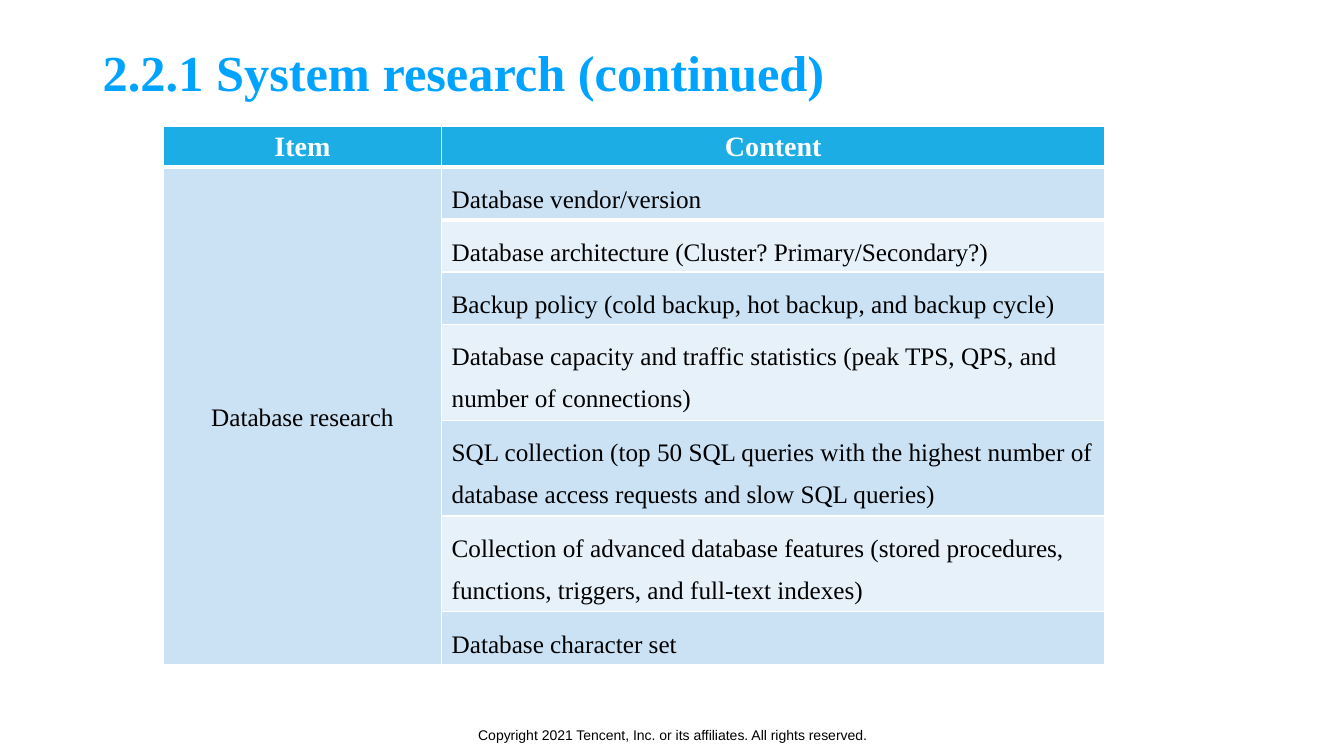
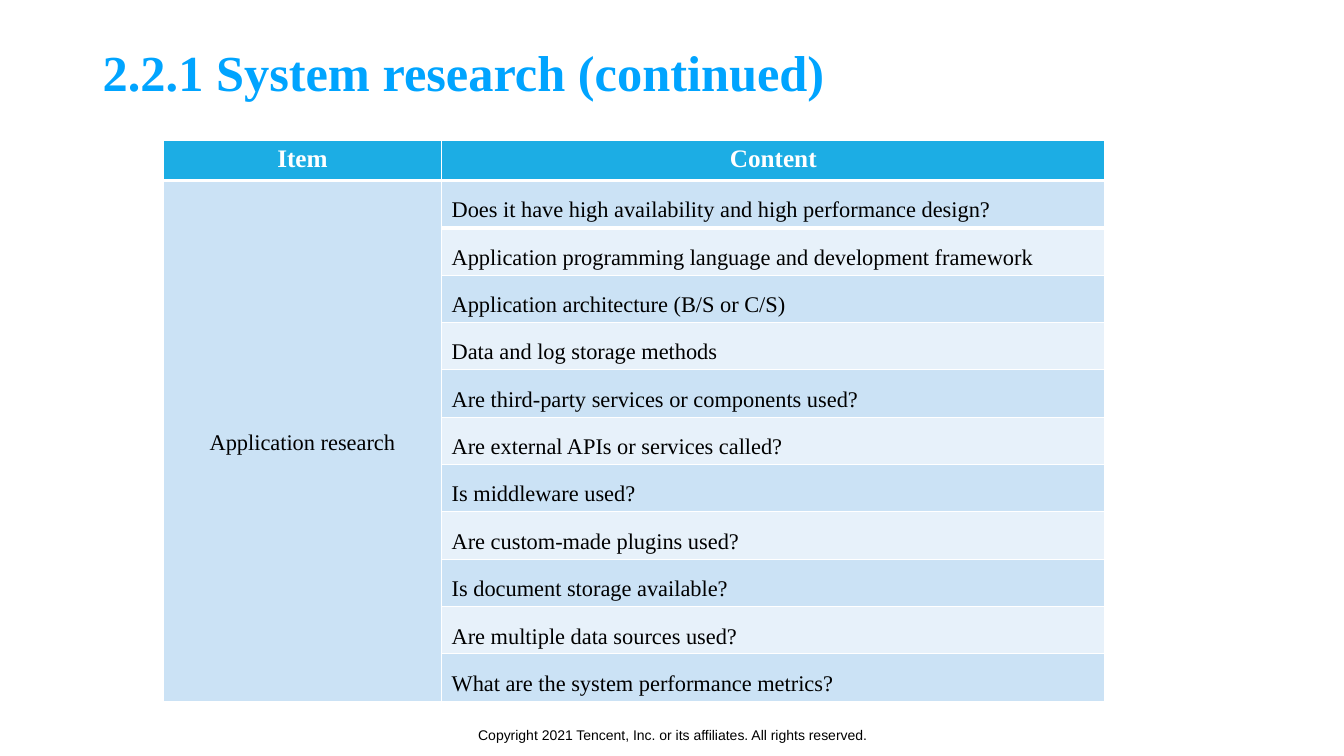
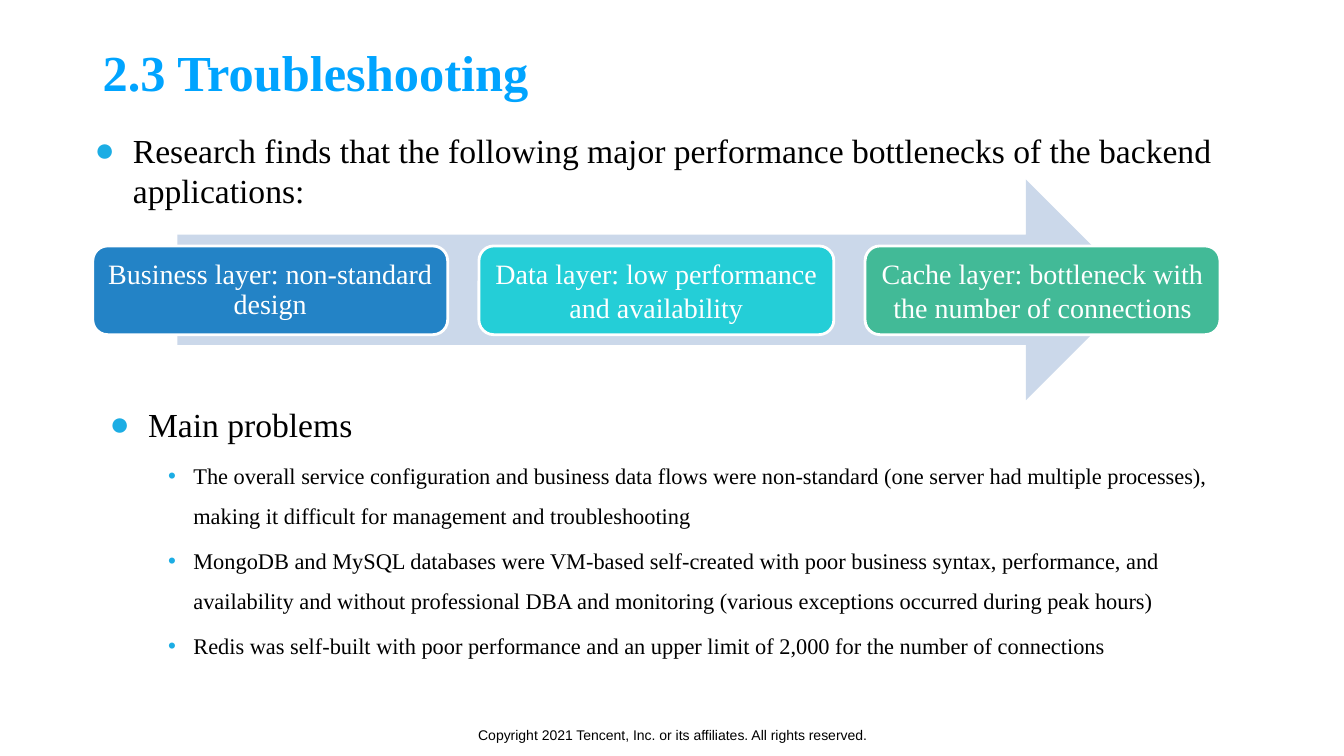
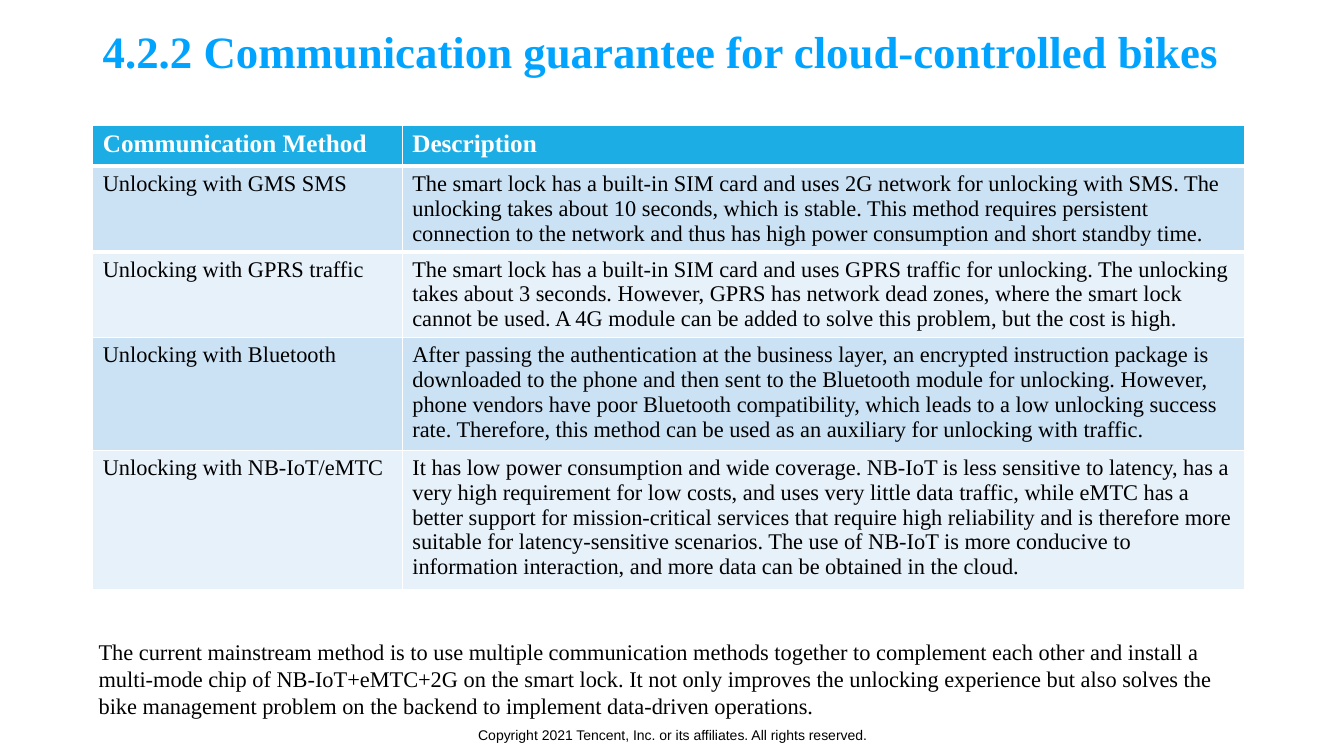
from pptx import Presentation
from pptx.dml.color import RGBColor
from pptx.enum import shapes, text
from pptx.oxml import parse_xml
from pptx.oxml.ns import nsdecls
from pptx.util import Inches, Pt

TITLE_BLUE = RGBColor(0x00, 0xA4, 0xFF)
ACCENT = RGBColor(0x1C, 0xAD, 0xE4)
ROW_DARK = RGBColor(0xCB, 0xE2, 0xF5)
ROW_LIGHT = RGBColor(0xE7, 0xF1, 0xFA)
ARROW = RGBColor(0xCB, 0xD8, 0xEA)
BLUE = RGBColor(0x23, 0x83, 0xC6)
CYAN = RGBColor(0x24, 0xCE, 0xD7)
GREEN = RGBColor(0x42, 0xBA, 0x97)
WHITE = RGBColor(0xFF, 0xFF, 0xFF)
BLACK = RGBColor(0x00, 0x00, 0x00)
SERIF = "Times New Roman"
CENTER = text.PP_ALIGN.CENTER
MIDDLE = text.MSO_ANCHOR.MIDDLE
FOOTER = "Copyright 2021 Tencent, Inc. or its affiliates. All rights reserved."

PAGES = [
    {
        "title": "2.2.1 System research (continued)",
        "table": {
            "at": (1.62, 1.25), "widths": (2.76, 6.58), "sizes": (20, 18), "merged": True,
            "heights": [0.41] + [0.52] * 3 + [0.93] * 3 + [0.52],
            "rows": [
                ("Item", "Content"),
                ("Database research", "Database vendor/version"),
                ("", "Database architecture (Cluster? Primary/Secondary?)"),
                ("", "Backup policy (cold backup, hot backup, and backup cycle)"),
                ("", "Database capacity and traffic statistics (peak TPS, QPS, and number of connections)"),
                ("", "SQL collection (top 50 SQL queries with the highest number of database access "
                     "requests and slow SQL queries)"),
                ("", "Collection of advanced database features (stored procedures, functions, "
                     "triggers, and full-text indexes)"),
                ("", "Database character set"),
            ],
        },
    },
    {
        "title": "2.2.1 System research (continued)",
        "table": {
            "at": (1.62, 1.39), "widths": (2.76, 6.58), "sizes": (18, 16), "merged": True,
            "heights": [0.4] + [0.47] * 11,
            "rows": [
                ("Item", "Content"),
                ("Application research", "Does it have high availability and high performance design?"),
                ("", "Application programming language and development framework"),
                ("", "Application architecture (B/S or C/S)"),
                ("", "Data and log storage methods"),
                ("", "Are third-party services or components used?"),
                ("", "Are external APIs or services called?"),
                ("", "Is middleware used?"),
                ("", "Are custom-made plugins used?"),
                ("", "Is document storage available?"),
                ("", "Are multiple data sources used?"),
                ("", "What are the system performance metrics?"),
            ],
        },
    },
    {
        "title": "2.3 Troubleshooting",
        "problems": [
            "The overall service configuration and business data flows were non-standard (one server "
            "had multiple processes), making it difficult for management and troubleshooting",
            "MongoDB and MySQL databases were VM-based self-created with poor business syntax, "
            "performance, and availability and without professional DBA and monitoring (various "
            "exceptions occurred during peak hours)",
            "Redis was self-built with poor performance and an upper limit of 2,000 for the number "
            "of connections",
        ],
        "finding": "Research finds that the following major performance bottlenecks of the backend "
                   "applications:",
        "layers": [
            ("Business layer: non-standard design", BLUE, 0.9),
            ("Data layer: low performance and availability", CYAN, 1.0),
            ("Cache layer: bottleneck with the number of connections", GREEN, 1.0),
        ],
    },
    {
        "title": "4.2.2 Communication guarantee for cloud-controlled bikes",
        "title_top": 0.04, "title_width": 11.89, "title_size": 32,
        "table": {
            "at": (0.92, 1.24), "widths": (3.07, 8.35), "sizes": (18, 16), "merged": False,
            "heights": [0.41, 0.84, 0.84, 1.09, 1.33],
            "rows": [
                ("Communication Method", "Description"),
                ("Unlocking with GMS SMS",
                 "The smart lock has a built-in SIM card and uses 2G network for unlocking with SMS. "
                 "The unlocking takes about 10 seconds, which is stable. This method requires "
                 "persistent connection to the network and thus has high power consumption and "
                 "short standby time."),
                ("Unlocking with GPRS traffic",
                 "The smart lock has a built-in SIM card and uses GPRS traffic for unlocking. The "
                 "unlocking takes about 3 seconds. However, GPRS has network dead zones, where the "
                 "smart lock cannot be used. A 4G module can be added to solve this problem, but "
                 "the cost is high."),
                ("Unlocking with Bluetooth",
                 "After passing the authentication at the business layer, an encrypted instruction "
                 "package is downloaded to the phone and then sent to the Bluetooth module for "
                 "unlocking. However, phone vendors have poor Bluetooth compatibility, which leads "
                 "to a low unlocking success rate. Therefore, this method can be used as an "
                 "auxiliary for unlocking with traffic."),
                ("Unlocking with NB-IoT/eMTC",
                 "It has low power consumption and wide coverage. NB-IoT is less sensitive to "
                 "latency, has a very high requirement for low costs, and uses very little data "
                 "traffic, while eMTC has a better support for mission-critical services that "
                 "require high reliability and is therefore more suitable for latency-sensitive "
                 "scenarios. The use of NB-IoT is more conducive to information interaction, and "
                 "more data can be obtained in the cloud."),
            ],
        },
        "summary": "The current mainstream method is to use multiple communication methods together to "
                   "complement each other and install a multi-mode chip of NB-IoT+eMTC+2G on the smart "
                   "lock. It not only improves the unlocking experience but also solves the bike "
                   "management problem on the backend to implement data-driven operations.",
    },
]


def style(para, size, color=BLACK, bold=False, font=SERIF, align=None, spacing=None):
    para.alignment = align
    para.line_spacing = spacing
    for span in para.runs:
        span.font.size = Pt(size)
        span.font.name = font
        span.font.bold = bold
        span.font.color.rgb = color


def add_text(page, at, lines, bullets=None):
    """Add a wrapping text box; bullets holds (mark, left margin, hanging indent) per line."""
    box = page.shapes.add_textbox(*[Inches(length) for length in at])
    box.text_frame.word_wrap = True
    box.text_frame.text = "\n".join(lines)
    for para, (mark, margin, hang) in zip(box.text_frame.paragraphs, bullets or []):
        props = para._p.get_or_add_pPr()
        props.set("marL", str(Inches(margin)))
        props.set("indent", str(-Inches(hang)))
        for xml in (f'<a:buClr {nsdecls("a")}><a:srgbClr val="{ACCENT}"/></a:buClr>',
                    f'<a:buFont {nsdecls("a")} typeface="Arial"/>',
                    f'<a:buChar {nsdecls("a")} char="{mark}"/>'):
            props.append(parse_xml(xml))
    return box.text_frame


deck = Presentation()
deck.slide_width, deck.slide_height = Inches(13.33), Inches(7.5)

for content in PAGES:
    page = deck.slides.add_slide(deck.slide_layouts[6])

    footer = add_text(page, (4.07, 7.09, 5.2, 0.4), [FOOTER])
    footer.vertical_anchor = MIDDLE
    style(footer.paragraphs[0], 10, font="Arial", align=CENTER)

    title_at = (0.92, content.get("title_top", 0.25), content.get("title_width", 10.74), 0.99)
    title = add_text(page, title_at, [content["title"]])
    title.vertical_anchor = MIDDLE
    style(title.paragraphs[0], content.get("title_size", 36), TITLE_BLUE, bold=True, spacing=0.9)

    if "table" in content:
        grid = content["table"]
        rows, merged = grid["rows"], grid["merged"]
        left, top = grid["at"]
        table = page.shapes.add_table(len(rows), 2, Inches(left), Inches(top),
                                      Inches(sum(grid["widths"])), Inches(sum(grid["heights"]))).table
        for column, width in zip(table.columns, grid["widths"]):
            column.width = Inches(width)
        for line, height in zip(table.rows, grid["heights"]):
            line.height = Inches(height)
        header_size, body_size = grid["sizes"]
        for r, row in enumerate(rows):
            for c, words in enumerate(row):
                cell = table.cell(r, c)
                cell.text = words
                cell.margin_bottom = 0  # row heights already hold the lower gap
                cell.fill.solid()
                para = cell.text_frame.paragraphs[0]
                if r == 0:
                    cell.fill.fore_color.rgb = ACCENT
                    style(para, header_size, WHITE, bold=True, align=CENTER if merged else None)
                else:
                    cell.fill.fore_color.rgb = ROW_DARK if r % 2 else ROW_LIGHT
                    style(para, body_size, align=CENTER if merged and c == 0 else None,
                          spacing=1.5 if merged and c == 1 else None)
                if r < 2:
                    edge = "lnT" if r else "lnB"
                    cell._tc.get_or_add_tcPr().insert(0, parse_xml(
                        f'<a:{edge} {nsdecls("a")} w="{Pt(3)}"><a:solidFill>'
                        f'<a:srgbClr val="{WHITE}"/></a:solidFill></a:{edge}>'))
        if merged:
            table.cell(1, 0).merge(table.cell(len(rows) - 1, 0))
            table.cell(1, 0).vertical_anchor = MIDDLE

    if "problems" in content:
        problems = content["problems"]
        frame = add_text(page, (0.99, 3.76, 11.5, 3.07), ["Main problems"] + problems,
                         [("●", 0.38, 0.38)] + [("•", 0.83, 0.25)] * len(problems))
        style(frame.paragraphs[0], 24, spacing=1.5)
        for para in frame.paragraphs[1:]:
            style(para, 16, spacing=1.5)
            para.space_before = Pt(3.2)

        finding = add_text(page, (0.84, 1.24, 11.66, 1.87), [content["finding"]], [("●", 0.38, 0.38)])
        style(finding.paragraphs[0], 24)

        arrow = page.shapes.add_shape(shapes.MSO_SHAPE.RIGHT_ARROW, Inches(1.76), Inches(1.78),
                                      Inches(9.51), Inches(2.19))
        arrow.shadow.inherit = False
        arrow.fill.solid()
        arrow.fill.fore_color.rgb = ARROW
        arrow.line.fill.background()

        for i, (words, color, spacing) in enumerate(content["layers"]):
            card = page.shapes.add_shape(shapes.MSO_SHAPE.ROUNDED_RECTANGLE, Inches(0.92 + 3.83 * i),
                                         Inches(2.44), Inches(3.52), Inches(0.88))
            card.shadow.inherit = False
            card.fill.solid()
            card.fill.fore_color.rgb = color
            card.line.color.rgb = WHITE
            card.line.width = Pt(2)
            frame = card.text_frame
            frame.margin_left = frame.margin_right = frame.margin_top = frame.margin_bottom = Inches(0.08)
            frame.word_wrap = True
            frame.vertical_anchor = MIDDLE
            frame.text = words
            style(frame.paragraphs[0], 20, WHITE, align=CENTER, spacing=spacing)

    if "summary" in content:
        summary = add_text(page, (0.88, 6.28, 11.47, 0.91), [content["summary"]])
        style(summary.paragraphs[0], 16)

deck.save("out.pptx")
